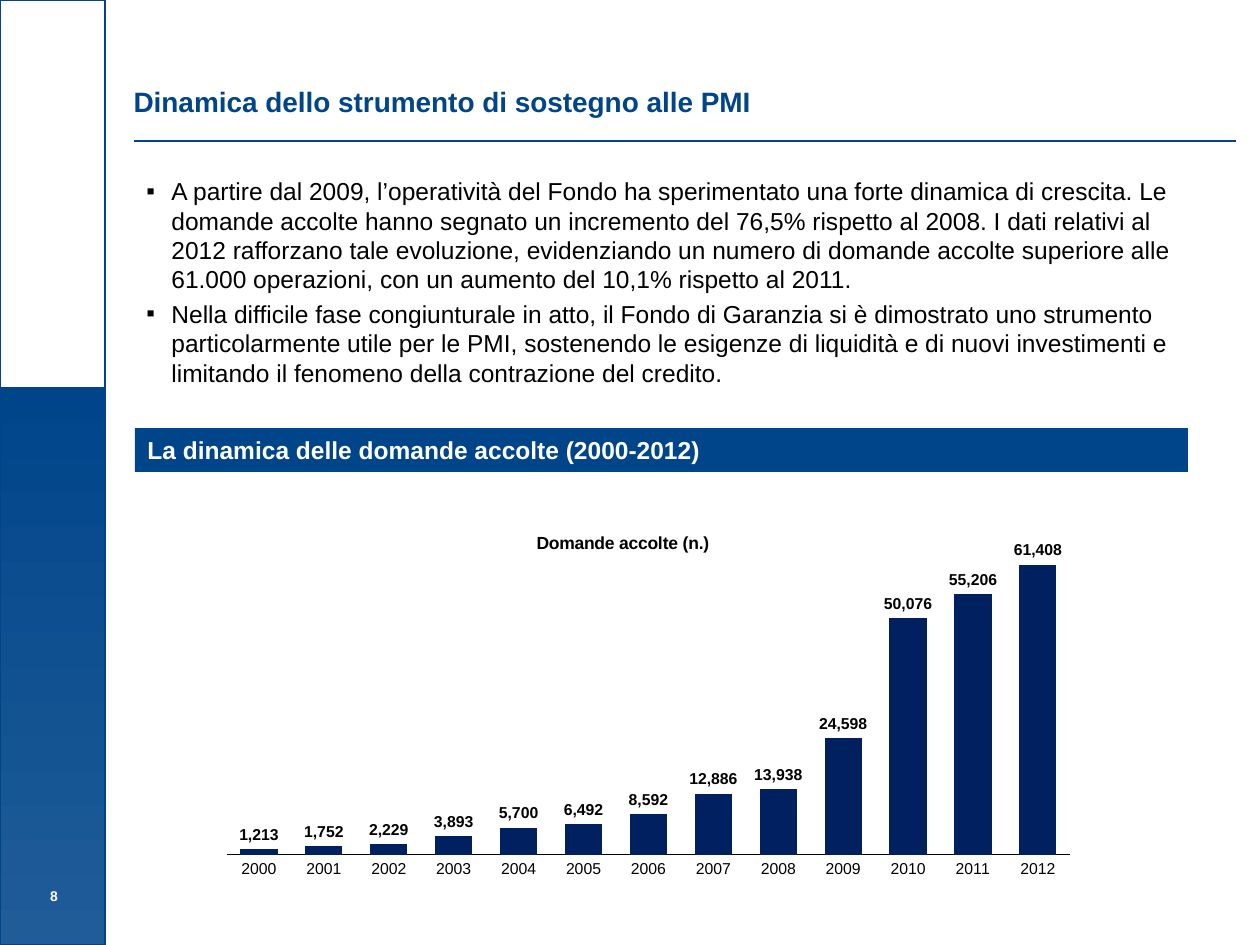
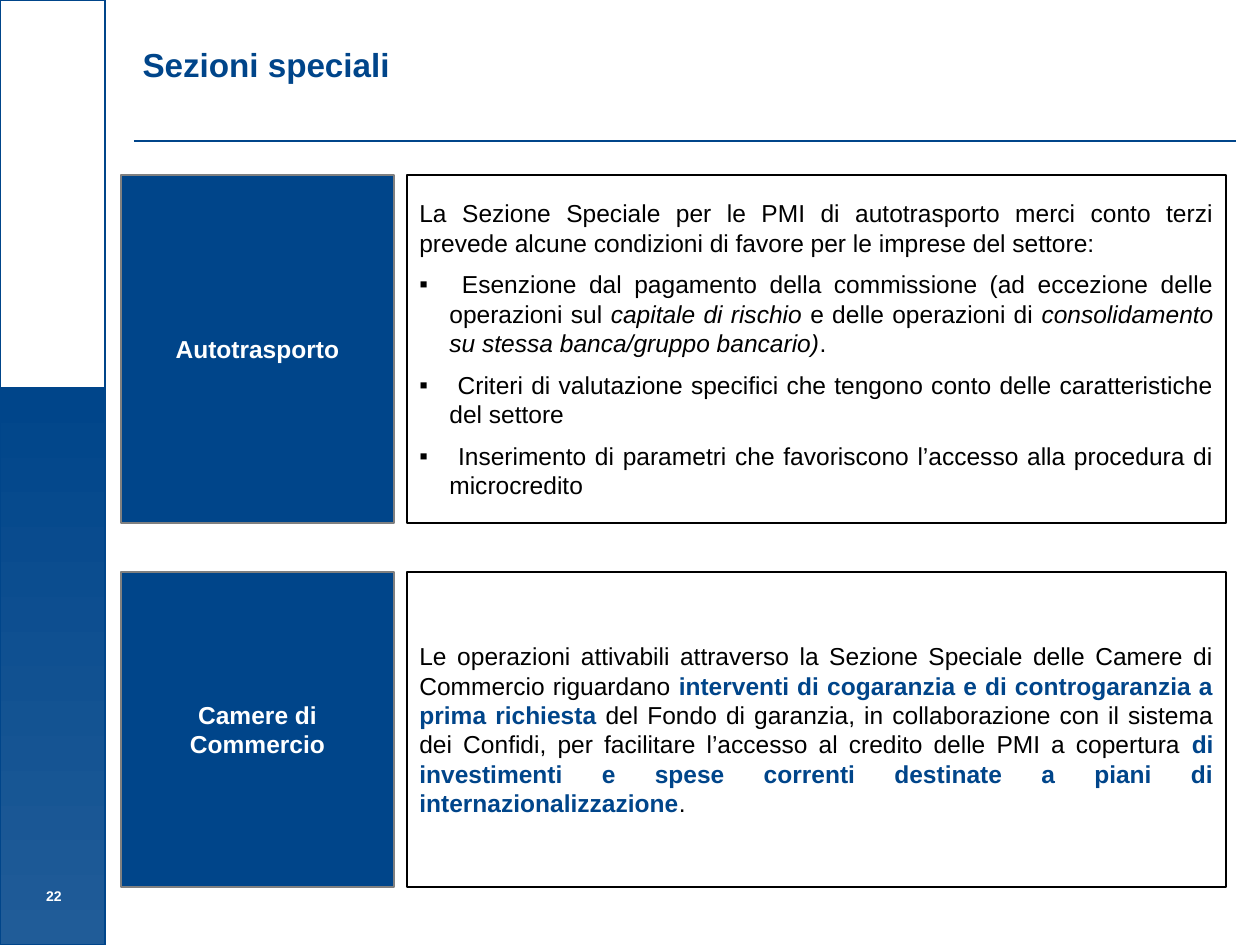
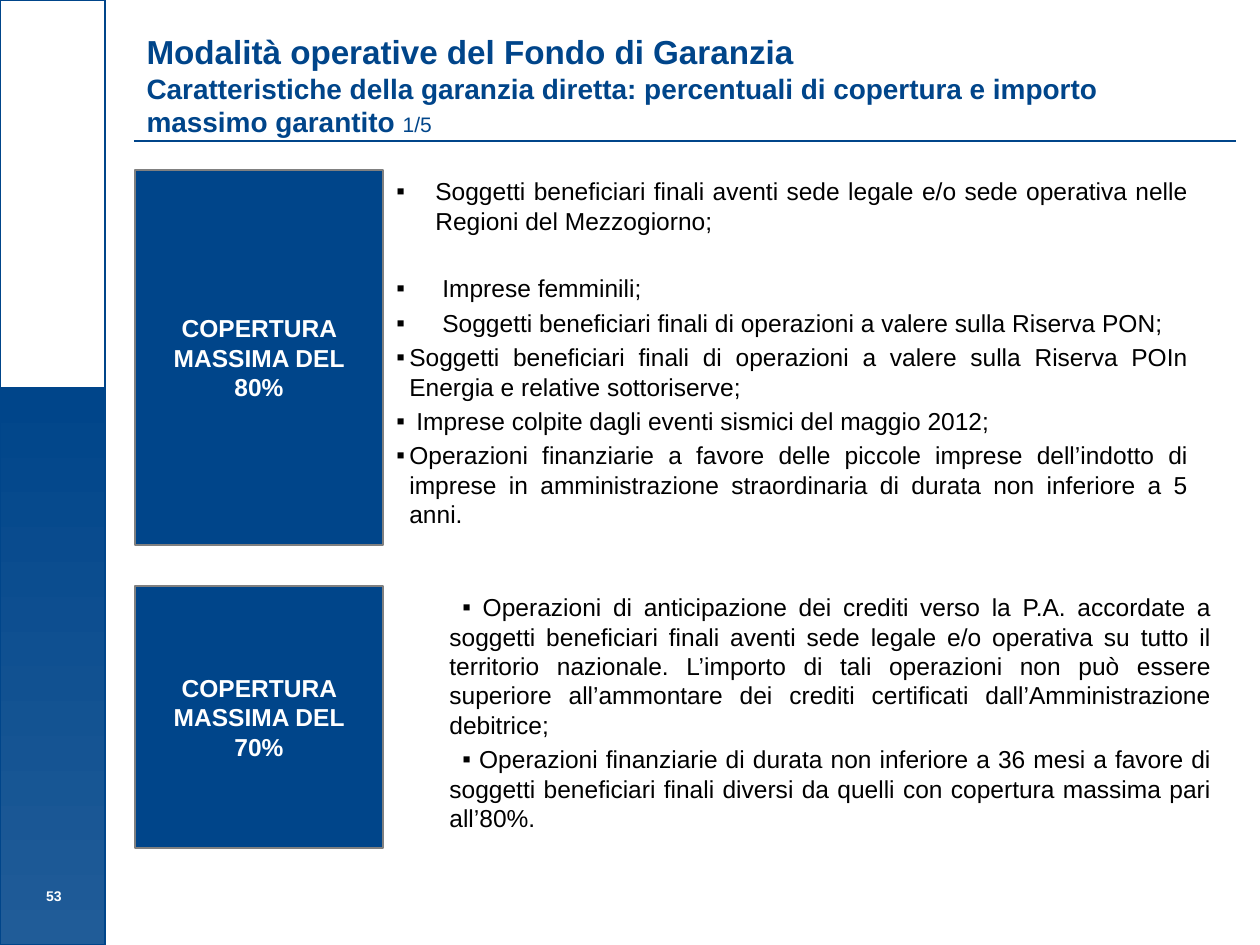
from lxml import etree
from pptx import Presentation
from pptx import util as u
from pptx.chart import data
from pptx.dml import color as col
from pptx.enum import chart as kinds, shapes, text
from pptx.oxml import ns

ALIGN = text.PP_ALIGN
ANCHOR = text.MSO_ANCHOR


class Theme:
    font = "Arial"
    blue = "00458A"
    fade = "205C98"
    navy = "002060"
    gray = "808080"
    black = "000000"
    white = "FFFFFF"
    head = 19
    sub = 16
    body = 14
    count = 12
    name = 10
    label = 9
    page = 8


def px(n):
    return u.Emu(round(n * 914400 / 126))


def rgb(code):
    return col.RGBColor.from_string(code)


def node(parent, tag, **attrs):
    item = etree.SubElement(parent, ns.qn(tag))
    for key, val in attrs.items():
        item.set(key, str(val))
    return item


def style(font, size, color=Theme.black, bold=False, italic=False):
    font.name = Theme.font
    font.size = u.Pt(size)
    font.bold = bold
    font.italic = italic
    font.color.rgb = rgb(color)


def put(frame, *bits, align=ALIGN.LEFT, gap=0, bullet=None, size=Theme.body, **fmt):
    para = frame.paragraphs[0]
    if para.runs:
        para = frame.add_paragraph()
    else:
        gap = 0
    para.alignment = align
    para.space_before = u.Pt(gap)
    if bullet:
        props = para._p.get_or_add_pPr()
        margin, indent = bullet
        props.set("marL", str(px(margin)))
        props.set("indent", str(px(indent)))
        node(props, "a:buFont", typeface=Theme.font)
        node(props, "a:buChar", char="▪")
    for bit in bits:
        if bit == "\n":
            para.add_line_break()
            continue
        words, own = (bit, {}) if isinstance(bit, str) else bit
        run = para.add_run()
        run.text = words
        style(run.font, **{"size": size, **fmt, **own})


def layout(parent, spot, **vals):
    old = parent.find(ns.qn("c:layout"))
    if old is not None:
        parent.remove(old)
    box = etree.Element(ns.qn("c:layout"))
    parent.insert(spot, box)
    manual = node(box, "c:manualLayout")
    for key, val in vals.items():
        node(manual, f"c:{key}", val=val)


class Deck:
    def __init__(self):
        self.prs = Presentation()
        self.prs.slide_width = px(1260)
        self.prs.slide_height = px(945)
        self.slide = None

    def start(self, page):
        self.slide = self.prs.slides.add_slide(self.prs.slide_layouts[5])
        self.rule(134, 1236, 141)
        band = self.rect(0, 388, 105, 557, line=Theme.blue)
        band.fill.gradient()
        band.fill.gradient_angle = 270
        for stop, tint in zip(band.fill.gradient_stops, (Theme.blue, Theme.fade)):
            stop.color.rgb = rgb(tint)
        self.rect(0, 0, 105, 393, line=Theme.blue)
        frame = self.note(0, 848, 108, 63, anchor=ANCHOR.BOTTOM)
        put(frame, page, align=ALIGN.CENTER, size=Theme.page, color=Theme.white, bold=True)

    def fit(self, frame, anchor):
        frame.word_wrap = True
        frame.auto_size = text.MSO_AUTO_SIZE.NONE
        frame.vertical_anchor = anchor
        frame.margin_left = frame.margin_right = u.Inches(0.1)
        frame.margin_top = frame.margin_bottom = u.Inches(0.05)
        return frame

    def title(self, x, y, w, h):
        box = self.slide.shapes.title
        box.left, box.top, box.width, box.height = map(px, (x, y, w, h))
        return self.fit(box.text_frame, ANCHOR.TOP)

    def note(self, x, y, w, h, anchor=ANCHOR.TOP):
        box = self.slide.shapes.add_textbox(*map(px, (x, y, w, h)))
        return self.fit(box.text_frame, anchor)

    def rect(self, x, y, w, h, fill=None, line=None):
        box = self.slide.shapes.add_shape(
            shapes.MSO_SHAPE.RECTANGLE, *map(px, (x, y, w, h)))
        box.shadow.inherit = False
        if fill:
            box.fill.solid()
            box.fill.fore_color.rgb = rgb(fill)
        else:
            box.fill.background()
        if line:
            box.line.color.rgb = rgb(line)
            box.line.width = u.Pt(0.75)
        else:
            box.line.fill.background()
        self.fit(box.text_frame, ANCHOR.MIDDLE)
        return box

    def rule(self, left, right, y):
        line = self.slide.shapes.add_connector(
            shapes.MSO_CONNECTOR.STRAIGHT, *map(px, (left, y, right, y)))
        line.line.color.rgb = rgb(Theme.blue)
        line.line.width = u.Pt(1.5)
        node(line._element.spPr, "a:effectLst")

    def label(self, x, y, w, h, words):
        box = self.rect(x, y, w, h, fill=Theme.blue, line=Theme.gray)
        put(box.text_frame, words, align=ALIGN.CENTER, color=Theme.white, bold=True)

    def bars(self, x, y, w, h, name, cats, vals):
        feed = data.CategoryChartData(number_format="#,##0")
        feed.categories = cats
        feed.add_series(name, vals)
        chart = self.slide.shapes.add_chart(
            kinds.XL_CHART_TYPE.COLUMN_CLUSTERED, *map(px, (x, y, w, h)), feed).chart
        style(chart.font, Theme.page)
        chart.has_legend = False
        chart.has_title = True
        put(chart.chart_title.text_frame, name, align=ALIGN.CENTER,
            size=Theme.name, bold=True)
        layout(chart.chart_title._element, 1, xMode="edge", yMode="edge", x=0.38, y=0.13)
        layout(chart._chartSpace.chart.plotArea, 0, layoutTarget="inner",
               xMode="edge", yMode="edge", x=0.06, y=0.12, w=0.88, h=0.76)

        years = chart.category_axis
        years.major_tick_mark = kinds.XL_TICK_MARK.NONE
        years.format.line.color.rgb = rgb(Theme.black)
        years.format.line.width = u.Pt(0.25)
        style(years.tick_labels.font, Theme.label)
        scale = chart.value_axis
        scale.visible = False
        scale.has_major_gridlines = False
        scale.minimum_scale = 0
        scale.maximum_scale = 70000
        scale.major_unit = 10000

        plot = chart.plots[0]
        plot.gap_width = 75
        plot.overlap = -25
        plot.vary_by_categories = False
        fill = plot.series[0].format.fill
        fill.solid()
        fill.fore_color.rgb = rgb(Theme.navy)
        plot.has_data_labels = True
        tags = plot.data_labels
        tags.show_value = True
        tags.number_format = "#,##0"
        tags.number_format_is_linked = False
        tags.position = kinds.XL_LABEL_POSITION.OUTSIDE_END
        style(tags.font, Theme.label, bold=True)


HEAD = {"color": Theme.blue, "bold": True}
JUST = {"align": ALIGN.JUSTIFY}


def growth(deck):
    deck.start("8")
    put(deck.title(121, 78, 1067, 60),
        "Dinamica dello strumento di sostegno alle PMI", size=Theme.sub, **HEAD)
    band = deck.rect(135, 428, 1053, 44, fill=Theme.blue)
    put(band.text_frame, "La dinamica delle domande accolte (2000-2012)",
        color=Theme.white, bold=True)
    frame = deck.note(134, 170, 1055, 228)
    for words in (
        "A partire dal 2009, l’operatività del Fondo ha sperimentato una forte dinamica "
        "di crescita. Le domande accolte hanno segnato un incremento del 76,5% rispetto "
        "al 2008. I dati relativi al 2012 rafforzano tale evoluzione, evidenziando un "
        "numero di domande accolte superiore alle 61.000 operazioni, con un aumento del "
        "10,1% rispetto al 2011.",
        "Nella difficile fase congiunturale in atto, il Fondo di Garanzia si è dimostrato "
        "uno strumento particolarmente utile per le PMI, sostenendo le esigenze di "
        "liquidità e di nuovi investimenti e limitando il fenomeno della contrazione del "
        "credito.",
    ):
        put(frame, words, bullet=(25, -25), gap=2.8)
    deck.bars(169, 472, 959, 435, "Domande accolte (n.)",
              [str(year) for year in range(2000, 2013)],
              [1213, 1752, 2229, 3893, 5700, 6492, 8592, 12886, 13938,
               24598, 50076, 55206, 61408])


def sections(deck):
    deck.start("22")
    put(deck.title(130, 38, 1060, 87), "Sezioni speciali", size=Theme.head, **HEAD)
    frames = []
    for y, h, words in ((175, 348, "Autotrasporto"), (572, 315, "Camere di Commercio")):
        deck.label(121, y, 273, h, words)
        frames.append(deck.rect(407, y, 819, h, line=Theme.black).text_frame)
    road, trade = frames

    put(road, "La Sezione Speciale per le PMI di autotrasporto merci conto terzi "
        "prevede alcune condizioni di favore per le imprese del settore:", **JUST)
    slant = {"italic": True}
    for bits in (
        (" Esenzione dal pagamento della commissione (ad eccezione delle operazioni sul ",
         ("capitale di rischio", slant),
         " e delle operazioni di ",
         ("consolidamento su stessa banca/gruppo bancario)", slant),
         "."),
        (" Criteri di valutazione specifici che tengono conto delle caratteristiche "
         "del settore",),
        (" Inserimento di parametri che favoriscono l’accesso alla procedura di "
         "microcredito",),
    ):
        put(road, *bits, bullet=(30, -30), gap=7, **JUST)

    put(trade,
        "Le operazioni attivabili attraverso la Sezione Speciale delle Camere di "
        "Commercio riguardano ",
        ("interventi di cogaranzia e di controgaranzia a prima richiesta ", HEAD),
        "del Fondo di garanzia, in collaborazione con il sistema dei Confidi, per "
        "facilitare l’accesso al credito delle PMI a copertura ",
        ("di investimenti e spese correnti destinate a piani di internazionalizzazione",
         HEAD),
        ".", **JUST)


def cover(deck):
    deck.start("53")
    frame = deck.title(134, 25, 1066, 132)
    put(frame, "Modalità operative del Fondo di Garanzia", size=Theme.head, **HEAD)
    put(frame,
        "Caratteristiche della garanzia diretta: percentuali di copertura e importo "
        "massimo garantito ",
        ("1/5", {"size": Theme.count, "bold": False}), size=Theme.sub, **HEAD)
    for y, h, rate in ((170, 375, 80), (586, 262, 70)):
        deck.label(135, y, 248, h, f"COPERTURA MASSIMA DEL {rate}%")

    frame = deck.note(384, 170, 817, 375)
    for hang, gap, *bits in (
        (39, 0, "Soggetti beneficiari finali aventi sede legale e/o sede operativa nelle "
         "Regioni del Mezzogiorno;"),
        (46, 22, "Imprese femminili;"),
        (46, 2.8, "Soggetti beneficiari finali di operazioni a valere sulla Riserva PON;"),
        (13, 2.8, "Soggetti beneficiari finali di operazioni a valere sulla Riserva POIn",
         "\n", "Energia e relative sottoriserve;"),
        (20, 2.8, "Imprese colpite dagli eventi sismici del maggio 2012;"),
        (13, 2.8, "Operazioni finanziarie a favore delle piccole imprese dell’indotto di "
         "imprese in amministrazione straordinaria di durata non inferiore a 5 anni."),
    ):
        put(frame, *bits, bullet=(hang, -hang), gap=gap, **JUST)

    frame = deck.note(407, 586, 817, 262)
    for words in (
        " Operazioni di anticipazione dei crediti verso la P.A. accordate a soggetti "
        "beneficiari finali aventi sede legale e/o operativa su tutto il territorio "
        "nazionale. L’importo di tali operazioni non può essere superiore all’ammontare "
        "dei crediti certificati dall’Amministrazione debitrice;",
        " Operazioni finanziarie di durata non inferiore a 36 mesi a favore di soggetti "
        "beneficiari finali diversi da quelli con copertura massima pari all’80%.",
    ):
        put(frame, words, bullet=(30, 13), gap=2.8, **JUST)


def main():
    deck = Deck()
    for build in (growth, sections, cover):
        build(deck)
    deck.prs.save("out.pptx")


if __name__ == "__main__":
    main()
